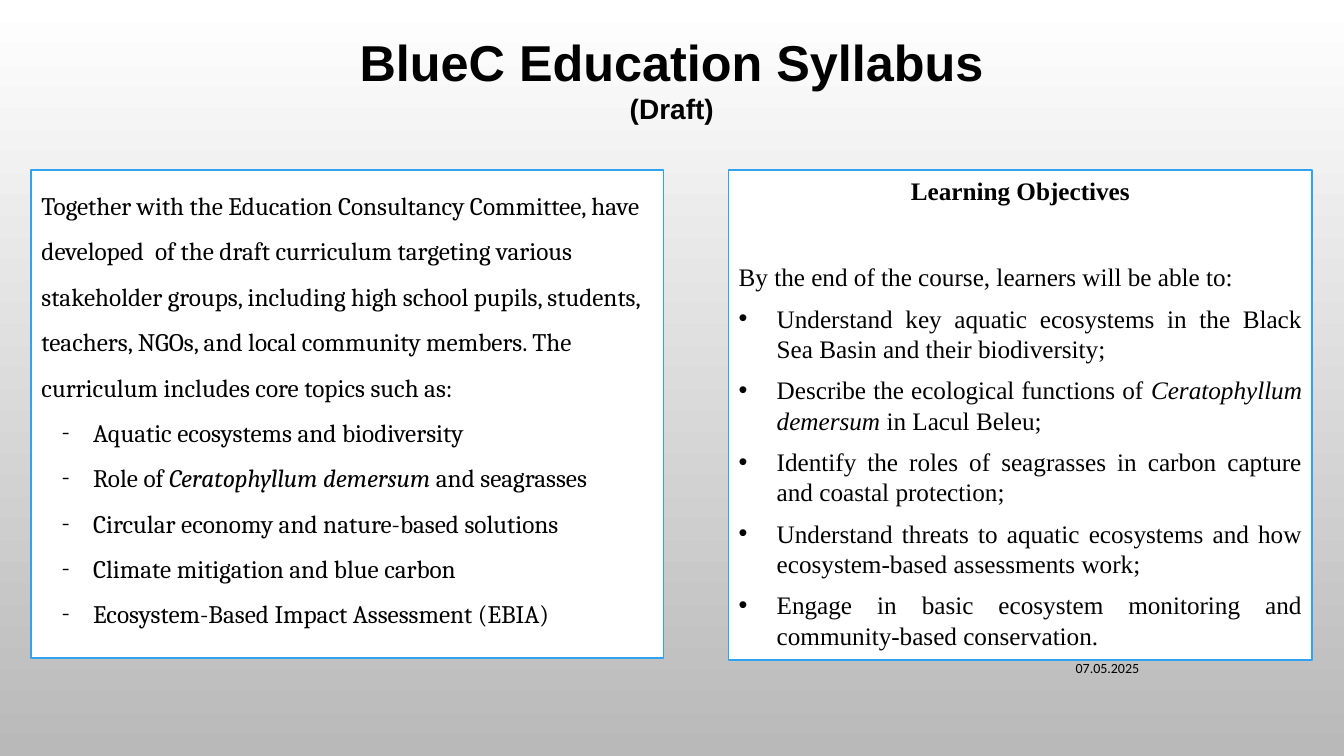
from dataclasses import dataclass

from lxml.etree import SubElement
from pptx import Presentation
from pptx.dml.color import RGBColor
from pptx.enum.text import MSO_ANCHOR, MSO_AUTO_SIZE, PP_ALIGN as Align
from pptx.oxml.ns import qn
from pptx.util import Cm, Pt


@dataclass(frozen=True)
class Theme:
    text: RGBColor = RGBColor(0x00, 0x00, 0x00)
    panel: RGBColor = RGBColor(0xFF, 0xFF, 0xFF)
    border: RGBColor = RGBColor(0x2F, 0xA3, 0xEE)
    gradient: tuple = (RGBColor(0xFF, 0xFF, 0xFF), RGBColor(0xB9, 0xB9, 0xB9))
    title_size: int = 36
    subtitle_size: int = 20
    body_size: int = 18
    date_size: int = 10


@dataclass(frozen=True)
class Bullet:
    character: str
    font: str
    margin: float
    hanging: float


@dataclass(frozen=True)
class Run:
    text: str
    bold: bool = False
    italic: bool = False
    size: int = Theme.body_size


@dataclass(frozen=True)
class Entry:
    runs: tuple[Run, ...]
    align: Align = Align.LEFT
    bullet: Bullet | None = None
    space_after: float = 0


@dataclass(frozen=True)
class Panel:
    left: float
    width: float
    height: float
    font: str
    line_spacing: float
    entries: tuple[Entry, ...]


THEME = Theme()
PANEL_TOP = 4.29
SPECIES = "Ceratophyllum demersum"
DASH = Bullet("-", "Cambria", 1.3, 0.79)
DOT = Bullet("•", "Arial", 0.96, 0.96)

TOPICS = (
    (Run("Aquatic ecosystems and biodiversity"),),
    (Run("Role of "), Run(SPECIES + " ", italic=True), Run("and seagrasses")),
    (Run("Circular economy and nature-based solutions"),),
    (Run("Climate mitigation and blue carbon"),),
    (Run("Ecosystem-Based Impact Assessment (EBIA)"),),
)
OBJECTIVES = (
    (Run("Understand key aquatic ecosystems in the Black Sea Basin and their biodiversity;"),),
    (Run("Describe the ecological functions of "), Run(SPECIES, italic=True),
     Run(" in Lacul Beleu;")),
    (Run("Identify the roles of seagrasses in carbon capture and coastal protection;"),),
    (Run("Understand threats to aquatic ecosystems and how ecosystem-based assessments work;"),),
    (Run("Engage in basic ecosystem monitoring and community-based conservation."),),
)
INTRODUCTION = Run(
    "Together with the Education Consultancy Committee, have developed  of the draft "
    "curriculum targeting various stakeholder groups, including high school pupils, "
    "students, teachers, NGOs, and local community members. The curriculum includes "
    "core topics such as:"
)

PANELS = (
    Panel(0.79, 15.93, 12.29, "Cambria", 1.5, (
        Entry((INTRODUCTION,)),
        *(Entry(topic, bullet=DASH) for topic in TOPICS),
    )),
    Panel(18.36, 14.71, 12.34, "Times New Roman", 1.0, (
        Entry((Run("Learning Objectives", bold=True),), Align.CENTER, space_after=40),
        Entry((Run("By the end of the course, learners will be able to:"),),
              Align.JUSTIFY, space_after=8),
        *(Entry(objective, Align.JUSTIFY, DOT, 8) for objective in OBJECTIVES),
    )),
)


def place(shape, left: float, top: float, width: float, height: float) -> None:
    shape.left, shape.top = Cm(left), Cm(top)
    shape.width, shape.height = Cm(width), Cm(height)


def set_bullet(paragraph, bullet: Bullet | None) -> None:
    properties = paragraph._p.get_or_add_pPr()
    properties.set("marL", str(Cm(bullet.margin) if bullet else 0))
    properties.set("indent", str(-Cm(bullet.hanging) if bullet else 0))
    if bullet:
        SubElement(properties, qn("a:buFont"), typeface=bullet.font)
        SubElement(properties, qn("a:buChar"), char=bullet.character)
    else:
        SubElement(properties, qn("a:buNone"))


def write_text(shape, entries: tuple[Entry, ...], *, font: str,
               line_spacing: float = 1.0, anchor: MSO_ANCHOR = MSO_ANCHOR.TOP) -> None:
    frame = shape.text_frame
    frame.word_wrap = True
    frame.auto_size = MSO_AUTO_SIZE.NONE
    frame.vertical_anchor = anchor
    for index, entry in enumerate(entries):
        paragraph = frame.add_paragraph() if index else frame.paragraphs[0]
        set_bullet(paragraph, entry.bullet)
        paragraph.alignment = entry.align
        paragraph.line_spacing = line_spacing
        paragraph.space_before = Pt(0)
        paragraph.space_after = Pt(entry.space_after)
        for part in entry.runs:
            run = paragraph.add_run()
            run.text = part.text
            run.font.name = font
            run.font.size = Pt(part.size)
            run.font.bold = part.bold
            run.font.italic = part.italic
            run.font.color.rgb = THEME.text


def paint_background(slide) -> None:
    fill = slide.background.fill
    fill.gradient()
    fill.gradient_angle = 270
    for position, (stop, color) in enumerate(zip(fill.gradient_stops, THEME.gradient)):
        stop.position = position
        stop.color.rgb = color


def draw_panel(shape, panel: Panel) -> None:
    place(shape, panel.left, PANEL_TOP, panel.width, panel.height)
    shape.fill.solid()
    shape.fill.fore_color.rgb = THEME.panel
    shape.line.color.rgb = THEME.border
    shape.line.width = Pt(1.25)
    write_text(shape, panel.entries, font=panel.font, line_spacing=panel.line_spacing)


def main() -> None:
    presentation = Presentation()
    presentation.slide_width, presentation.slide_height = Cm(33.87), Cm(19.05)
    two_content = presentation.slide_layouts[3]
    slide = presentation.slides.add_slide(two_content)
    paint_background(slide)

    title, *bodies = slide.placeholders
    place(title, 8.46, 0.66, 16.94, 2.64)
    heading = Entry((
        Run("BlueC Education Syllabus ", bold=True, size=THEME.title_size),
        Run("(Draft)", bold=True, size=THEME.subtitle_size),
    ), Align.CENTER)
    write_text(title, (heading,), font="Arial")

    for body, panel in zip(bodies, PANELS):
        draw_panel(body, panel)

    date = slide.shapes.add_textbox(Cm(21.34), Cm(16.33), Cm(7.62), Cm(1.02))
    date_entry = Entry((Run("07.05.2025", size=THEME.date_size),), Align.RIGHT)
    write_text(date, (date_entry,), font="Calibri", anchor=MSO_ANCHOR.MIDDLE)

    presentation.save("out.pptx")


if __name__ == "__main__":
    main()
